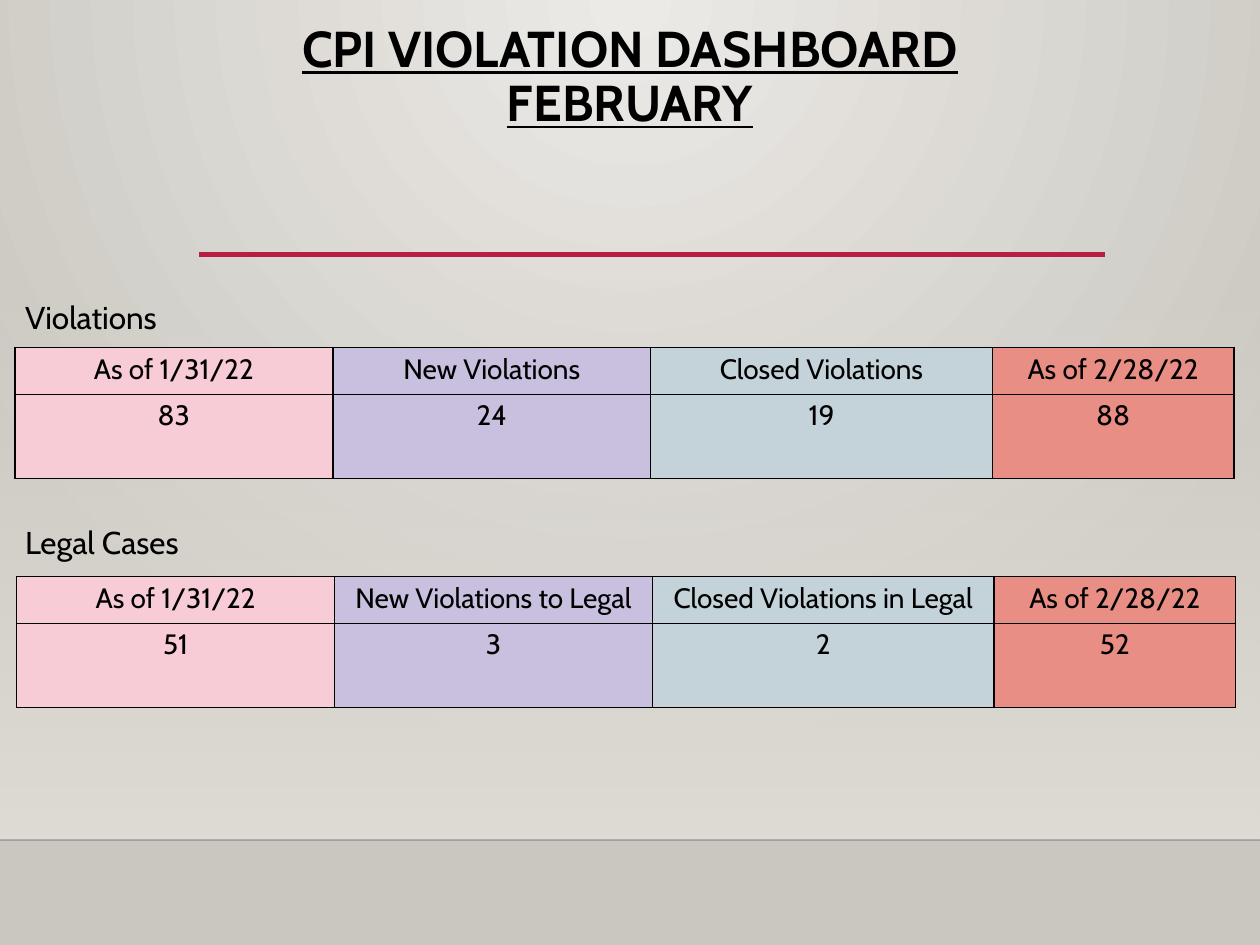
from lxml.etree import SubElement
from pptx import Presentation
from pptx.dml.color import RGBColor
from pptx.enum.shapes import MSO_CONNECTOR, MSO_SHAPE
from pptx.enum.text import MSO_ANCHOR, MSO_AUTO_SIZE, PP_ALIGN
from pptx.oxml import parse_xml
from pptx.oxml.ns import nsdecls, qn
from pptx.util import Pt

# Content
TITLE = "CPI VIOLATION DASHBOARD\vFEBRUARY"
SECTIONS = [
    {"label": "Violations", "label_top": 167, "left": 8.5, "top": 198.7,
     "rows": [("As of 1/31/22", "New Violations", "Closed Violations", "As of 2/28/22"),
              ("83", "24", "19", "88")]},
    {"label": "Legal Cases", "label_top": 295.2, "left": 9.5, "top": 329.5,
     "rows": [("As of 1/31/22", "New Violations to Legal", "Closed Violations in Legal",
               "As of 2/28/22"),
              ("51", "3", "2", "52")]},
]

# Look
COLORS = {"text": "000000", "accent": "B71E42", "edge": "000001", "band": "DFDBD5",
          "center": "ECEAE7", "rim": "CAC7C1"}
COLUMN_FILLS = ["F7CCD6", "C9BFDF", "C3D3D9", "E88E84"]
COLUMN_WIDTHS = [181.7, 181.7, 195.2, 138]
ROW_HEIGHTS = [26.7, 48]
PAGE_WIDTH, PAGE_HEIGHT = 720, 540
BAND_TOP, FLOOR = 158.4, 480
TITLE_FORMAT = {"size": Pt(28.8), "bold": True, "underline": True}
LABEL_FORMAT = {"size": Pt(18)}
CELL_FORMAT = {"size": Pt(16)}
CELL_MARGINS = {"margin_left": Pt(5.2), "margin_right": Pt(5.2),
                "margin_top": Pt(2.6), "margin_bottom": Pt(2.6)}


def write(frame, text, formats, align=PP_ALIGN.LEFT):
    frame.text = text
    para = frame.paragraphs[0]
    para.alignment = align
    for span in para.runs:
        span.font.name = "Cabin"
        span.font.color.rgb = RGBColor.from_string(COLORS["text"])
        for name, value in formats.items():
            setattr(span.font, name, value)
    return para


def set_gradient(parent, stops, direction):
    """Swap the solid fill of parent for a gradient of (position, color, opacity)."""
    stop_xml = "".join(
        f'<a:gs pos="{position * 1000}"><a:srgbClr val="{color}">'
        f'<a:alpha val="{opacity * 1000}"/></a:srgbClr></a:gs>'
        for position, color, opacity in stops)
    gradient = parse_xml(f'<a:gradFill {nsdecls("a")} rotWithShape="1">'
                         f'<a:gsLst>{stop_xml}</a:gsLst>{direction}</a:gradFill>')
    parent.replace(parent.find(qn("a:solidFill")), gradient)


def add_rule(page, left, right, top, color, width, opacity=100):
    rule = page.shapes.add_connector(MSO_CONNECTOR.STRAIGHT, Pt(left), Pt(top),
                                     Pt(right), Pt(top))
    rule.line.width = Pt(width)
    rule.line.color.rgb = RGBColor.from_string(color)
    properties = rule._element.spPr
    if opacity < 100:
        tint = properties.find(".//" + qn("a:srgbClr"))
        SubElement(tint, qn("a:alpha"), val=str(opacity * 1000))
    SubElement(properties, qn("a:effectLst"))


def format_cell(cell, text, color):
    # Borders go before the fill in the cell properties
    properties = cell._tc.get_or_add_tcPr()
    for side in ("lnL", "lnR", "lnT", "lnB"):
        properties.append(parse_xml(
            f'<a:{side} {nsdecls("a")} w="{Pt(1)}"><a:solidFill>'
            f'<a:srgbClr val="{COLORS["text"]}"/></a:solidFill></a:{side}>'))
    cell.fill.solid()
    cell.fill.fore_color.rgb = RGBColor.from_string(color)
    for name, value in CELL_MARGINS.items():
        setattr(cell, name, value)
    write(cell.text_frame, text, CELL_FORMAT, PP_ALIGN.CENTER)


def add_section(page, section):
    box = page.shapes.add_textbox(Pt(7.2), Pt(section["label_top"]), Pt(258.5), Pt(29))
    box.text_frame.word_wrap = True
    write(box.text_frame, section["label"], LABEL_FORMAT)

    rows = section["rows"]
    table = page.shapes.add_table(
        len(rows), len(COLUMN_WIDTHS), Pt(section["left"]), Pt(section["top"]),
        Pt(sum(COLUMN_WIDTHS)), Pt(sum(ROW_HEIGHTS))).table
    for column, width in zip(table.columns, COLUMN_WIDTHS):
        column.width = Pt(width)
    for r, (texts, height) in enumerate(zip(rows, ROW_HEIGHTS)):
        table.rows[r].height = Pt(height)
        for c, (text, color) in enumerate(zip(texts, COLUMN_FILLS)):
            format_cell(table.cell(r, c), text, color)


def main():
    deck = Presentation()
    deck.slide_width, deck.slide_height = Pt(PAGE_WIDTH), Pt(PAGE_HEIGHT)
    page = deck.slides.add_slide(deck.slide_layouts[5])

    # Radial background
    page.background.fill.solid()
    set_gradient(page._element.find(".//" + qn("p:bgPr")),
                 [(0, COLORS["center"], 100), (100, COLORS["rim"], 100)],
                 '<a:path path="circle">'
                 '<a:fillToRect l="43000" t="0" r="43000" b="100000"/></a:path>')

    # Band that fades in towards the floor line
    band = page.shapes.add_shape(MSO_SHAPE.RECTANGLE, 0, Pt(BAND_TOP),
                                 Pt(PAGE_WIDTH), Pt(FLOOR - BAND_TOP))
    band.shadow.inherit = False
    band.line.fill.background()
    band.fill.solid()
    set_gradient(band._element.spPr,
                 [(0, COLORS["band"], 0), (100, COLORS["band"], 100)],
                 '<a:lin ang="5400000" scaled="0"/>')

    # Floor line and title rule
    add_rule(page, 0, PAGE_WIDTH, FLOOR, COLORS["edge"], 1, opacity=20)
    add_rule(page, 113.8, 631.2, 145.4, COLORS["accent"], 2.5)

    # Title
    title = page.shapes.title
    title.left, title.top, title.width, title.height = Pt(49.7), Pt(10), Pt(620.6), Pt(43.2)
    frame = title.text_frame
    frame.auto_size = MSO_AUTO_SIZE.NONE
    frame.vertical_anchor = MSO_ANCHOR.TOP
    write(frame, TITLE, TITLE_FORMAT, PP_ALIGN.CENTER).line_spacing = 0.9

    # Labelled tables
    for section in SECTIONS:
        add_section(page, section)

    deck.save("out.pptx")


if __name__ == "__main__":
    main()
